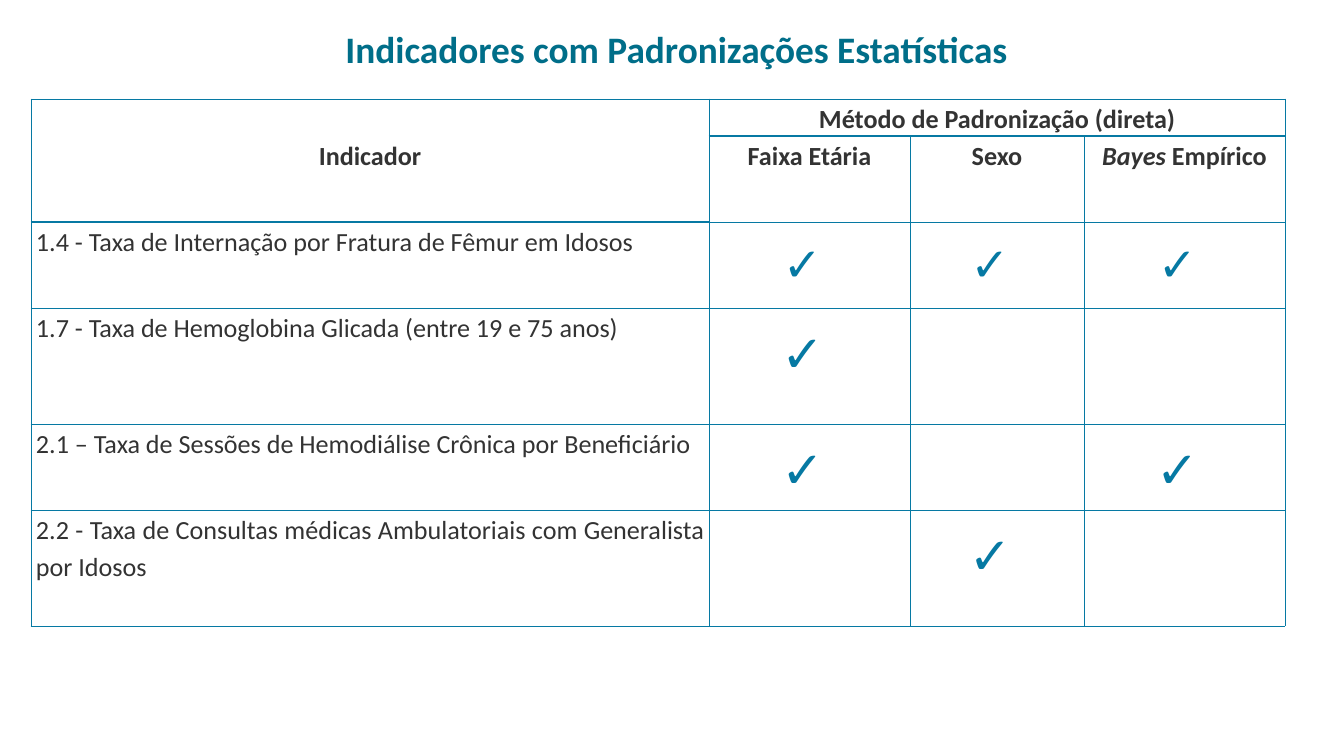
from lxml import etree
from pptx import Presentation
from pptx import util as u
from pptx.dml.color import RGBColor
from pptx.enum import text
from pptx.oxml.ns import qn

EMU_PER_PX = 914400 / 67.2
FONT = "Calibri"
TITLE_COLOR, TEXT_COLOR, ACCENT = "006E89", "333333", "0679A3"
CENTER, JUSTIFY = text.PP_ALIGN.CENTER, text.PP_ALIGN.JUSTIFY

COLUMNS = [678, 201, 174, 201]
ROWS = [37, 86, 86, 116, 86, 116]
METHODS = ["Faixa Etária", "Sexo", "Bayes Empírico"]
CHECK_BOX = 64
# Indicator, methods applied, size of the check mark, its centre below the row top
INDICATORS = [
    ("1.4 - Taxa de Internação por Fratura de Fêmur em Idosos", (1, 2, 3), 50, 41),
    ("1.7 - Taxa de Hemoglobina Glicada (entre 19 e 75 anos)", (1,), 55, 44),
    ("2.1 – Taxa de Sessões de Hemodiálise Crônica por Beneficiário", (1, 3), 55, 44),
    ("2.2 - Taxa de Consultas médicas Ambulatoriais com Generalista por Idosos",
     (2,), 55, 44),
]


def px(value):
    return u.Emu(round(value * EMU_PER_PX))


def color(value):
    return RGBColor.from_string(value)


def format_font(font, size, value, bold=False):
    font.name, font.size, font.bold = FONT, u.Pt(size), bold
    font.color.rgb = color(value)


def set_borders(cell, bottom=1):
    """Outline a cell; widths are in points."""
    properties = cell._tc.get_or_add_tcPr()
    widths = {"a:lnL": 1, "a:lnR": 1, "a:lnT": 1, "a:lnB": bottom}
    for position, (tag, width) in enumerate(widths.items()):
        line = etree.Element(qn(tag), w=str(u.Pt(width)))
        fill = etree.SubElement(line, qn("a:solidFill"))
        etree.SubElement(fill, qn("a:srgbClr"), val=ACCENT)
        properties.insert(position, line)


def write_cell(cell, words, align=CENTER, bold=False, top=0):
    cell.margin_left = cell.margin_right = px(5)
    cell.margin_top, cell.margin_bottom = px(top), 0
    cell.text_frame.text = words
    paragraph = cell.text_frame.paragraphs[0]
    paragraph.alignment, paragraph.line_spacing = align, 1.15
    for run in paragraph.runs:
        format_font(run.font, 28, TEXT_COLOR, bold)
    return paragraph


def add_label(slide, left, top, width, height, words, size, value,
              bold=False, inset=(0, 0), anchor=text.MSO_ANCHOR.TOP):
    box = slide.shapes.add_textbox(px(left), px(top), px(width), px(height))
    frame = box.text_frame
    frame.word_wrap, frame.vertical_anchor = True, anchor
    frame.margin_left = frame.margin_right = px(inset[0])
    frame.margin_top = frame.margin_bottom = px(inset[1])
    frame.text = words
    paragraph = frame.paragraphs[0]
    paragraph.alignment = CENTER
    format_font(paragraph.runs[0].font, size, value, bold)


def write_header(table):
    table.cell(0, 0).merge(table.cell(1, 0))
    table.cell(0, 1).merge(table.cell(0, 3))
    write_cell(table.cell(0, 0), "Indicador", bold=True, top=ROWS[0])
    write_cell(table.cell(0, 1), "Método de Padronização (direta)", bold=True)
    for column, method in enumerate(METHODS, 1):
        paragraph = write_cell(table.cell(1, column), method, bold=True)
    first, rest = METHODS[-1].split(" ")
    paragraph.runs[0].text = first
    paragraph.runs[0].font.italic = True
    run = paragraph.add_run()
    run.text = " " + rest
    format_font(run.font, 28, TEXT_COLOR, True)


def add_indicator_table(slide, left, top):
    frame = slide.shapes.add_table(len(ROWS), len(COLUMNS), px(left), px(top),
                                   px(sum(COLUMNS)), px(sum(ROWS)))
    table = frame.table
    table.first_row = table.horz_banding = False
    for column, width in zip(table.columns, COLUMNS):
        column.width = px(width)
    for row, height in zip(table.rows, ROWS):
        row.height = px(height)
    for row in range(len(ROWS)):
        for column in range(len(COLUMNS)):
            cell = table.cell(row, column)
            cell.fill.background()
            thick = row == 0 or (row == 1 and column == 0)
            set_borders(cell, 2 if thick else 1)

    write_header(table)
    for row, (name, *_) in enumerate(INDICATORS, 2):
        write_cell(table.cell(row, 0), name, JUSTIFY)


def add_check_marks(slide, left, top):
    """Lay the marks over the cells of the table at left, top."""
    for row, (_, methods, size, offset) in enumerate(INDICATORS, 2):
        for column in methods:
            center = left + sum(COLUMNS[:column]) + COLUMNS[column] / 2 - 7
            middle = top + sum(ROWS[:row]) + offset
            add_label(slide, center - CHECK_BOX / 2, middle - CHECK_BOX / 2,
                      CHECK_BOX, CHECK_BOX, "✓", size, ACCENT,
                      anchor=text.MSO_ANCHOR.MIDDLE)


def main():
    presentation = Presentation()
    presentation.slide_width, presentation.slide_height = px(1344), px(756)
    slide = presentation.slides.add_slide(presentation.slide_layouts[6])
    add_label(slide, 180, 21, 993, 78, "Indicadores com Padronizações Estatísticas",
              40, TITLE_COLOR, bold=True, inset=(10, 5))
    add_indicator_table(slide, 31, 99)
    add_check_marks(slide, 31, 99)
    presentation.save("out.pptx")


if __name__ == "__main__":
    main()
